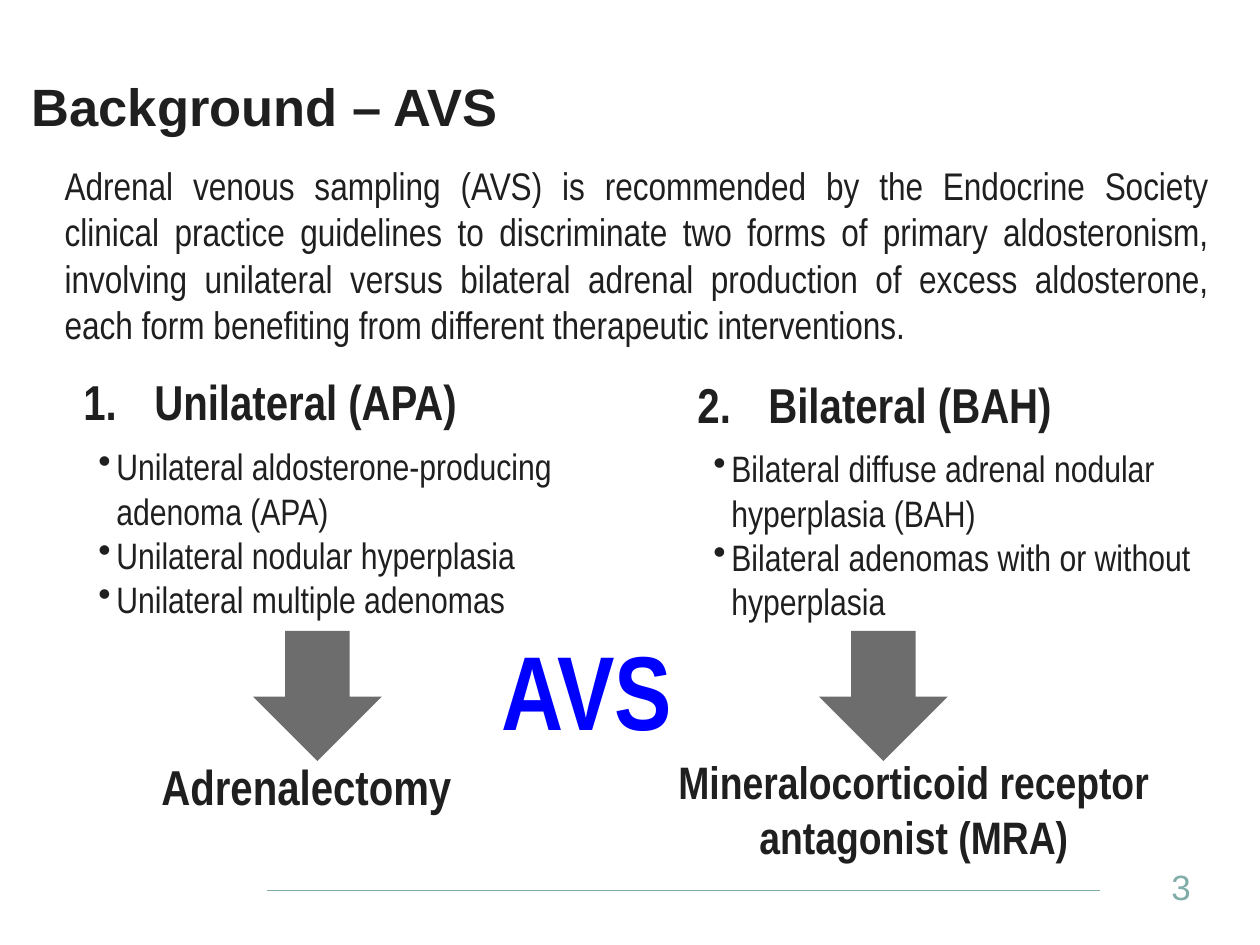
"""Build the slide on adrenal venous sampling."""
from dataclasses import dataclass

from lxml import etree
from pptx import Presentation
from pptx.dml.color import RGBColor
from pptx.enum.shapes import MSO_CONNECTOR, MSO_SHAPE
from pptx.enum.text import MSO_ANCHOR, MSO_AUTO_SIZE, PP_ALIGN
from pptx.oxml.ns import qn
from pptx.util import Emu, Pt

LINE, RECT, ARROW = MSO_CONNECTOR.STRAIGHT, MSO_SHAPE.RECTANGLE, MSO_SHAPE.DOWN_ARROW
TOP, MIDDLE, FIXED = MSO_ANCHOR.TOP, MSO_ANCHOR.MIDDLE, MSO_AUTO_SIZE.NONE
LEFT, CENTER, FULL = PP_ALIGN.LEFT, PP_ALIGN.CENTER, PP_ALIGN.JUSTIFY
SCALE = 914400 / 126
INK, TEAL, GREY, BLUE, WHITE = "1F1F1F", "81ADA8", "6D6D6D", "0000FF", "FFFFFF"
WIDE, SLIM = "Arial", "Arial Narrow"


@dataclass
class Style:
    """Hold the look of a text."""
    size: int
    bold: bool = False
    color: str = INK
    face: str = SLIM
    align: PP_ALIGN = LEFT
    anchor: MSO_ANCHOR = TOP
    wrap: bool = True


@dataclass
class Mark:
    """Hold a bullet tag, its values and its hanging indent."""
    tag: str
    values: dict
    indent: int


@dataclass
class Form:
    """Hold one form of disease: heading, causes and therapy."""
    number: int
    title: str
    head: tuple
    causes: list
    list_box: tuple
    arrow: tuple
    cure: list
    cure_box: tuple
    cure_style: Style


HEAD = Style(28, bold=True)
CAUSE = Style(21)
DOT = Mark("a:buChar", {"char": "•"}, 18)
PLAIN = Mark("a:buNone", {}, 0)
FORMS = [
    Form(1, "Unilateral (APA)", (71, 365, 486, 72),
         ["Unilateral aldosterone-producing adenoma (APA)",
          "Unilateral nodular hyperplasia", "Unilateral multiple adenomas"],
         (86, 438, 566, 193), (253, 631, 129, 130),
         ["Adrenalectomy"], (149, 750, 319, 72), Style(28, bold=True, wrap=False)),
    Form(2, "Bilateral (BAH)", (685, 368, 411, 72),
         ["Bilateral diffuse adrenal nodular hyperplasia (BAH)",
          "Bilateral adenomas with or without hyperplasia"],
         (701, 440, 522, 190), (819, 631, 129, 130),
         ["Mineralocorticoid receptor", "antagonist (MRA)"], (664, 748, 500, 123),
         Style(26, bold=True, align=CENTER, wrap=False)),
]


def px(value: int) -> Emu:
    """Turn px into EMU."""
    return Emu(round(value * SCALE))


def rgb(code: str) -> RGBColor:
    """Turn a hex string into a colour."""
    return RGBColor.from_string(code)


def assign(thing, values: dict) -> None:
    """Set each named value on an object."""
    for name, value in values.items():
        setattr(thing, name, value)


def place(shape, box: tuple) -> None:
    """Move and size a shape."""
    assign(shape, dict(zip(("left", "top", "width", "height"), map(px, box))))


def write(shape, lines: list, style: Style, mark: Mark | None = None) -> None:
    """Fill a shape with styled paragraphs."""
    frame = shape.text_frame
    assign(frame, {"text": "\n".join(lines), "auto_size": FIXED,
                   "word_wrap": style.wrap, "vertical_anchor": style.anchor})
    for para in frame.paragraphs:
        assign(para, {"alignment": style.align, "space_before": Pt(0)})
        if mark:
            props = para._p.get_or_add_pPr()
            props.set("marL", str(px(mark.indent)))
            props.set("indent", str(-px(mark.indent)))
            etree.SubElement(props, qn(mark.tag), mark.values)
        assign(para.font, {"size": Pt(style.size), "bold": style.bold, "name": style.face})
        para.font.color.rgb = rgb(style.color)


def label(slide, box: tuple, lines: list, style: Style, mark: Mark | None = None) -> None:
    """Add a text box."""
    write(slide.shapes.add_textbox(*map(px, box)), lines, style, mark)


def block(slide, kind: MSO_SHAPE, box: tuple, fill: str):
    """Add a flat filled shape."""
    shape = slide.shapes.add_shape(kind, *map(px, box))
    shape.shadow.inherit = False
    shape.fill.solid()
    shape.fill.fore_color.rgb = rgb(fill)
    shape.line.fill.background()
    return shape


def rule(slide, start: tuple, end: tuple) -> None:
    """Add the thin footer line."""
    line = slide.shapes.add_connector(LINE, *map(px, start + end))
    line.line.width = Pt(0.5)
    line.line.color.rgb = rgb(TEAL)
    etree.SubElement(line._element.spPr, qn("a:effectLst"))


def draw(slide, form: Form) -> None:
    """Draw one form of disease."""
    count = Mark("a:buAutoNum", {"type": "arabicPeriod", "startAt": str(form.number)}, 71)
    label(slide, form.head, [form.title], HEAD, count)
    label(slide, form.list_box, form.causes, CAUSE, DOT)
    block(slide, ARROW, form.arrow, GREY)
    label(slide, form.cure_box, form.cure, form.cure_style)


def main() -> None:
    """Build and save the deck."""
    deck = Presentation()
    assign(deck, {"slide_width": px(1260), "slide_height": px(945)})
    slide = deck.slides.add_slide(deck.slide_layouts[1])
    rule(slide, (267, 890), (1100, 890))
    title, body = slide.placeholders
    place(title, (19, 68, 999, 97))
    write(title, ["Background – AVS"], Style(30, bold=True, face=WIDE))
    place(body, (52, 156, 1169, 189))
    write(body, ["Adrenal venous sampling (AVS) is recommended by the Endocrine Society "
                 "clinical practice guidelines to discriminate two forms of primary "
                 "aldosteronism, involving unilateral versus bilateral adrenal production "
                 "of excess aldosterone, each form benefiting from different therapeutic "
                 "interventions."], Style(22, align=FULL), PLAIN)
    label(slide, (1159, 861, 101, 50), ["3"],
          Style(20, color=TEAL, face=WIDE, anchor=MIDDLE))
    avs = block(slide, RECT, (488, 619, 198, 140), WHITE)
    write(avs, ["AVS"], Style(60, bold=True, color=BLUE, align=CENTER, wrap=False))
    for form in FORMS:
        draw(slide, form)
    deck.save("out.pptx")


if __name__ == "__main__":
    main()
